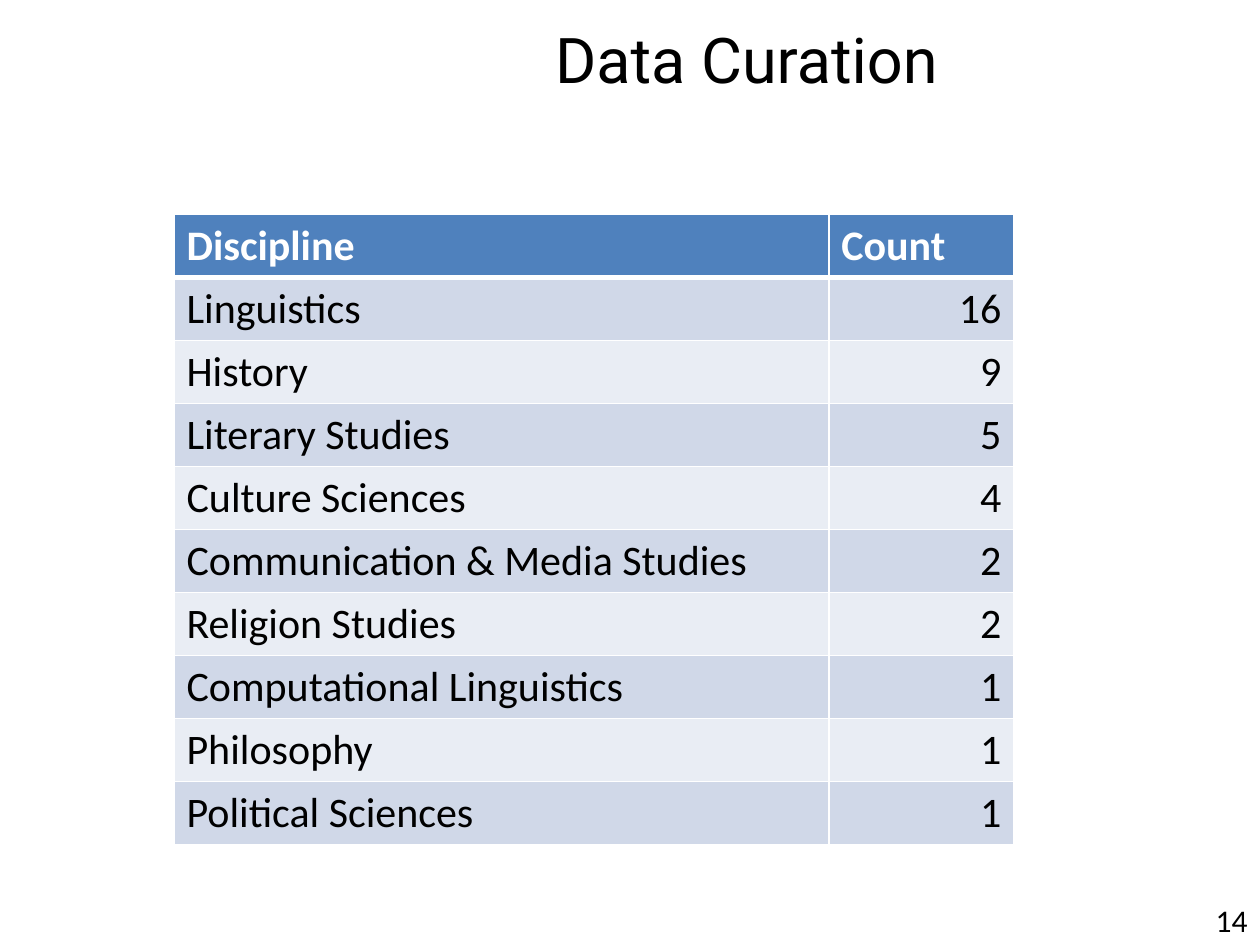
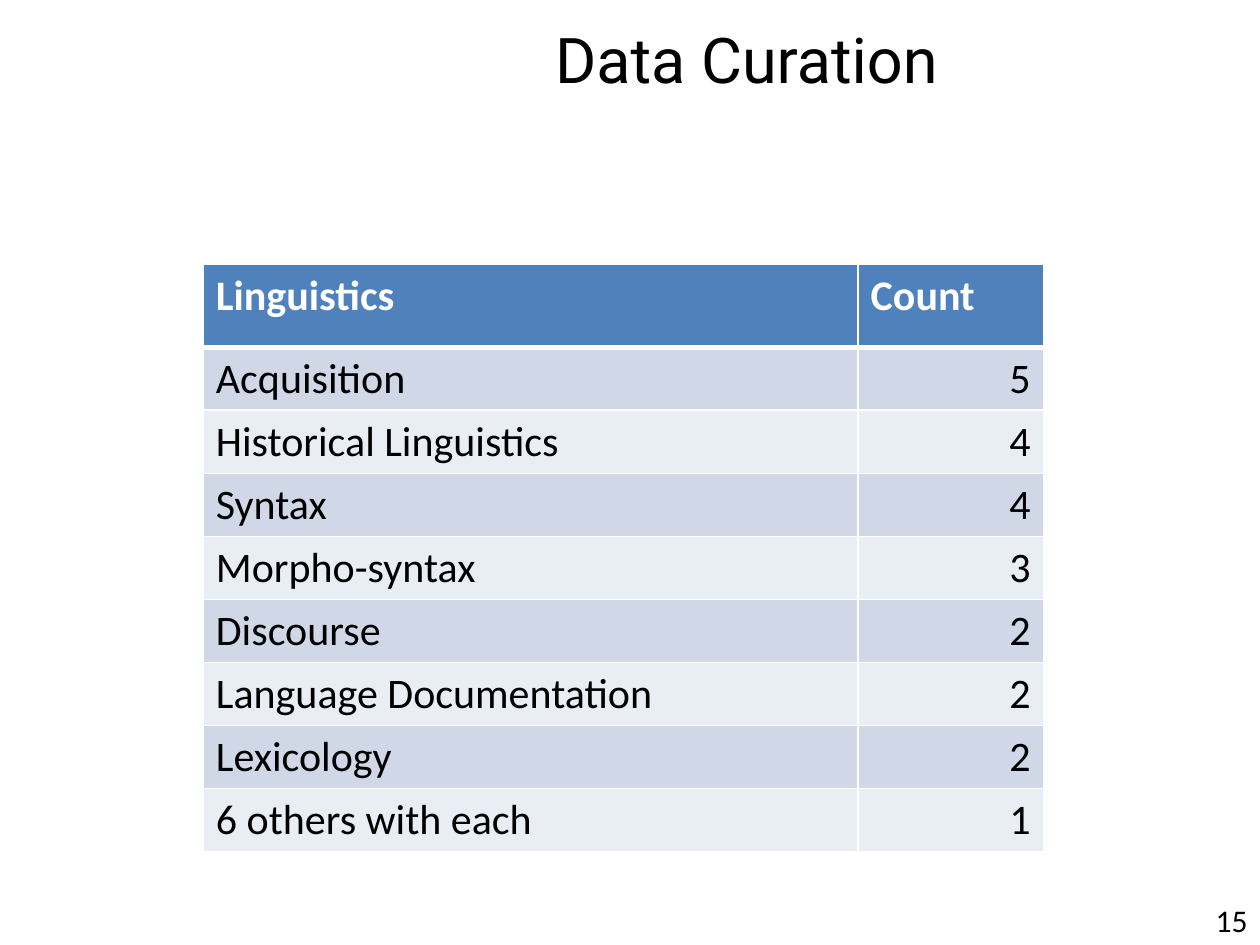
from lxml.etree import SubElement
from pptx import Presentation
from pptx.dml.color import RGBColor
from pptx.enum.text import MSO_ANCHOR, PP_ALIGN
from pptx.oxml.ns import qn
from pptx.util import Pt

TITLE = "Data Curation"
SLIDES = [
    {
        "number": 14, "left": 99.4, "top": 122.4, "header_height": 36,
        "header": ("Discipline", "Count"),
        "counts": [
            ("Linguistics", 16),
            ("History", 9),
            ("Literary Studies", 5),
            ("Culture Sciences", 4),
            ("Communication & Media Studies", 2),
            ("Religion Studies", 2),
            ("Computational Linguistics", 1),
            ("Philosophy", 1),
            ("Political Sciences", 1),
        ],
    },
    {
        "number": 15, "left": 116.2, "top": 151.2, "header_height": 47.2,
        "header": ("Linguistics", "Count"),
        "counts": [
            ("Acquisition", 5),
            ("Historical Linguistics", 4),
            ("Syntax", 4),
            ("Morpho-syntax", 3),
            ("Discourse", 2),
            ("Language Documentation", 2),
            ("Lexicology", 2),
            ("6 others with each", 1),
        ],
    },
]

COLORS = {
    "text": "000000", "header_text": "FFFFFF", "header": "4F81BD",
    "odd_row": "D0D8E8", "even_row": "E9EDF4", "border": "FFFFFF",
}
TITLE_FONT, BODY_FONT = "Roboto", "Calibri"
COLUMN_WIDTHS = (374.2, 105.8)
ROW_HEIGHT = 36
THIN, THICK = 1, 3


def write(frame, text, size, font=BODY_FONT, color="text", align=PP_ALIGN.LEFT, bold=False):
    paragraph = frame.paragraphs[0]
    paragraph.alignment = align
    run = paragraph.add_run()
    run.text = text
    run.font.size = Pt(size)
    run.font.name = font
    run.font.bold = bold
    run.font.color.rgb = RGBColor.from_string(COLORS[color])


def add_text(slide, box, text, size, anchor=MSO_ANCHOR.TOP, **style):
    frame = slide.shapes.add_textbox(*map(Pt, box)).text_frame
    frame.word_wrap = True
    frame.vertical_anchor = anchor
    write(frame, text, size, **style)


def set_borders(cell, top, bottom):
    properties = cell._tc.get_or_add_tcPr()
    for tag, width in (("a:lnL", THIN), ("a:lnR", THIN), ("a:lnT", top), ("a:lnB", bottom)):
        line = SubElement(properties, qn(tag), w=str(Pt(width)))
        fill = SubElement(line, qn("a:solidFill"))
        SubElement(fill, qn("a:srgbClr"), val=COLORS["border"])


def add_count_table(slide, content):
    rows = [content["header"], *content["counts"]]
    heights = [content["header_height"]] + [ROW_HEIGHT] * len(content["counts"])
    box = (content["left"], content["top"], sum(COLUMN_WIDTHS), sum(heights))
    table = slide.shapes.add_table(len(rows), len(COLUMN_WIDTHS), *map(Pt, box)).table
    for column, width in zip(table.columns, COLUMN_WIDTHS):
        column.width = Pt(width)
    for r, (values, height) in enumerate(zip(rows, heights)):
        table.rows[r].height = Pt(height)
        is_header = r == 0
        band = "header" if is_header else "odd_row" if r % 2 else "even_row"
        for c, value in enumerate(values):
            cell = table.cell(r, c)
            set_borders(cell, THICK if r == 1 else THIN, THICK if is_header else THIN)
            cell.fill.solid()
            cell.fill.fore_color.rgb = RGBColor.from_string(COLORS[band])
            write(cell.text_frame, str(value), 24,
                  color="header_text" if is_header else "text",
                  align=PP_ALIGN.RIGHT if c and not is_header else PP_ALIGN.LEFT,
                  bold=is_header)


def main():
    deck = Presentation()
    deck.slide_width, deck.slide_height = Pt(720), Pt(540)
    for content in SLIDES:
        slide = deck.slides.add_slide(deck.slide_layouts[6])
        add_text(slide, (133.2, 0, 586.8, 66.2), TITLE, 36, MSO_ANCHOR.MIDDLE,
                 font=TITLE_FONT, align=PP_ALIGN.CENTER)
        add_text(slide, (643.7, 511.2, 76.3, 28.8), str(content["number"]), 18,
                 align=PP_ALIGN.RIGHT)
        add_count_table(slide, content)
    deck.save("out.pptx")


if __name__ == "__main__":
    main()
